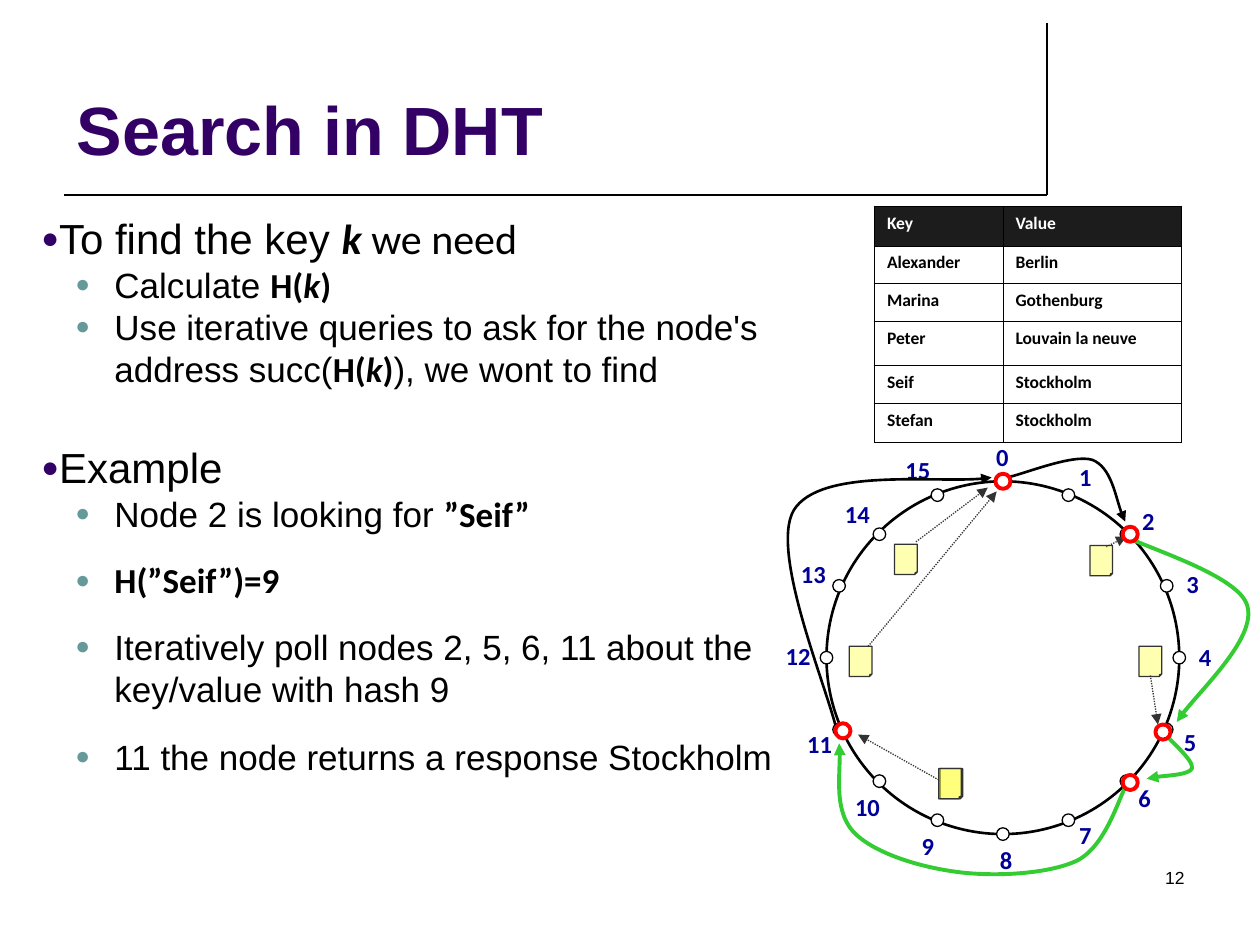
from dataclasses import dataclass

from lxml import etree
from pptx import Presentation, util as u
from pptx.dml.color import RGBColor
from pptx.enum import dml, shapes, text
from pptx.oxml.ns import qn

PX = 9144  # 100 px to the inch
BLACK, WHITE, GRAY, RED = "000000", "FFFFFF", "333333", "FF0000"
PURPLE, TEAL, NAVY, GREEN = "330066", "669999", "000099", "33CC33"
BOLD = dict(font="Calibri", bold=True)
ITAL = dict(BOLD, ital=True)
MID = (796, 522)  # centre of the ring


@dataclass
class Item:
    runs: list
    level: int = 1
    gap: float = 0


@dataclass
class Curve:
    points: list
    color: str = BLACK
    width: float = 1.5


ITEMS = [
    Item([("To find the key ", {}), ("k ", ITAL), ("we need", dict(font="Calibri"))], 0),
    Item([("Calculate ", {}), ("H(", BOLD), ("k", ITAL), (")", BOLD)]),
    Item([("Use iterative queries to ask for the node's address succ(", {}),
          ("H(", BOLD), ("k", ITAL), (")", BOLD), ("), we wont to find", {})]),
    Item([("Example", {})], 0, 30),
    Item([("Node 2 is looking for ", {}), ("”Seif”", BOLD)]),
    Item([("H(”Seif”)=9", BOLD)], gap=14),
    Item([("Iteratively poll nodes 2, 5, 6, 11 about the key/value with hash 9", {})], gap=14),
    Item([("11 the node returns a response Stockholm", {})], gap=15),
]
ROWS = [("Key", "Value"), ("Alexander", "Berlin"), ("Marina", "Gothenburg"),
        ("Peter", "Louvain la neuve"), ("Seif", "Stockholm"), ("Stefan", "Stockholm")]
COLS, HIGHS = (102, 142), (31, 30, 30, 35, 30, 31)

# Top left corners of the labels 0 to 15
LABELS = [(772, 351), (838, 367), (888, 402), (923, 452), (933, 510), (921, 577),
          (885, 622), (838, 651), (775, 671), (713, 660), (665, 629), (627, 579),
          (610, 509), (622, 444), (657, 396), (705, 361)]
# Offsets of the nodes in one quarter of the ring
STEPS = [(0, 140), (52, 129), (98, 98), (130, 57), (140, 0)]
PEERS = [(796, 382), (897, 424), (923, 581), (897, 621), (669, 580)]
NOTES = [(904, 513), (674, 513), (710, 432), (746, 610), (865, 433), (745, 610)]
LINKS = [(727, 430, 784, 387), (689, 513, 791, 390), (878, 434, 894, 426),
         (913, 536, 919, 575), (745, 619, 681, 583)]
CURVES = [
    Curve([(665, 584), (660, 554), (610, 439), (630, 405), (651, 371), (754, 385), (787, 379)]),
    Curve([(799, 379), (811, 377), (851, 360), (867, 365), (882, 371), (887, 403), (893, 414)]),
    Curve([(894, 426), (910, 435), (984, 457), (990, 481), (997, 506), (946, 554), (934, 573)],
          GREEN, 2.25),
    Curve([(925, 583), (929, 588), (948, 604), (946, 610), (943, 615), (917, 616), (910, 618)],
          GREEN, 2.25),
    Curve([(894, 623), (888, 633), (878, 671), (855, 683), (832, 694), (788, 696), (759, 692),
           (729, 688), (693, 677), (677, 660), (662, 643), (668, 605), (666, 590)], GREEN, 2.25),
]


def box(*vals: int) -> list:
    return [u.Emu(v * PX) for v in vals]


def tint(fmt, color: str) -> None:
    """Give a fill, or the fill of a line, one solid colour."""
    fmt.solid()
    fmt.fore_color.rgb = RGBColor.from_string(color)


def node(parent, tag: str, **attrs):
    return etree.SubElement(parent, qn("a:" + tag), attrs)


def put(par, words: str, size: float = 14, font: str = "Arial", color: str = BLACK,
        bold: bool = False, ital: bool = False, align=text.PP_ALIGN.LEFT) -> None:
    par.alignment = align
    run = par.add_run()
    run.text = words
    run.font.size, run.font.name = u.Pt(size), font
    run.font.bold, run.font.italic = bold, ital
    run.font.color.rgb = RGBColor.from_string(color)


def stroke(shape, color: str, width: float, head: bool = False, dots: bool = False) -> None:
    tint(shape.line.fill, color)
    shape.line.width = u.Pt(width)
    if dots:
        shape.line.dash_style = dml.MSO_LINE.ROUND_DOT
    if head:
        node(shape.element.spPr.find(qn("a:ln")), "tailEnd", type="triangle")


def line(slide, ends: tuple, color: str, width: float, **look) -> None:
    link = slide.shapes.add_connector(shapes.MSO_CONNECTOR.STRAIGHT, *box(*ends))
    stroke(link, color, width, **look)
    node(link.element.spPr, "effectLst")


def oval(slide, mid: tuple, size: tuple, color: str, width: float, fill: str = "") -> None:
    x, y = (m - s // 2 for m, s in zip(mid, size))
    disc = slide.shapes.add_shape(shapes.MSO_SHAPE.OVAL, *box(x, y, *size))
    disc.shadow.inherit = False
    stroke(disc, color, width)
    if fill:
        tint(disc.fill, fill)
    else:
        disc.fill.background()


def note(slide, x: int, y: int) -> None:
    page = slide.shapes.add_shape(shapes.MSO_SHAPE.FOLDED_CORNER, *box(x, y, 18, 24))
    page.shadow.inherit = False
    node(page.element.spPr.find(".//" + qn("a:avLst")), "gd", name="adj", fmla="val 10800")
    tint(page.fill, "FFFF00")
    node(page.element.spPr.find(".//" + qn("a:srgbClr")), "alpha", val="30000")
    stroke(page, GRAY, 0.75)


def bend(slide, curve: Curve) -> None:
    """Draw a Bezier curve: a start, then three points to each segment."""
    first, *rest = curve.points
    pen = slide.shapes.build_freeform(*first, scale=PX)
    pen.add_line_segments(rest, close=False)
    arc = pen.convert_to_shape()
    arc.shadow.inherit = False
    arc.fill.background()
    stroke(arc, curve.color, curve.width, head=True)
    route = arc.element.find(".//" + qn("a:path"))
    legs = route.findall(qn("a:lnTo"))
    for trio in zip(*[iter(legs)] * 3):
        cubic = node(route, "cubicBezTo")
        for leg in trio:
            cubic.append(leg[0])
            route.remove(leg)


def frame(slide, area: tuple, inset: bool = True):
    """Add a wrapping text box and return its text frame."""
    body = slide.shapes.add_textbox(*box(*area)).text_frame
    body.word_wrap = True
    if not inset:
        body.margin_left = body.margin_right = body.margin_top = body.margin_bottom = 0
        body.vertical_anchor = text.MSO_ANCHOR.MIDDLE
    return body


def bullets(slide) -> None:
    body = frame(slide, (23, 164, 658, 586))
    for i, item in enumerate(ITEMS):
        par = body.add_paragraph() if i else body.paragraphs[0]
        left, hang, color, size = [(0, 0, PURPLE, 24), (58, -31, TEAL, 20)][item.level]
        props = par._p.get_or_add_pPr()
        props.set("marL", str(left * PX))
        props.set("indent", str(hang * PX))
        node(node(props, "buClr"), "srgbClr", val=color)
        node(props, "buSzPct", val="70000")
        node(props, "buFont", typeface="Arial")
        node(props, "buChar", char="●")
        par.space_before = u.Pt(item.gap)
        for words, look in item.runs:
            put(par, words, size=size, **look)


def grid(slide) -> None:
    area = box(694, 164, sum(COLS), sum(HIGHS))
    table = slide.shapes.add_table(len(ROWS), len(COLS), *area).table
    for col, wide in zip(table.columns, COLS):
        col.width = u.Emu(wide * PX)
    for r, (row, high) in enumerate(zip(ROWS, HIGHS)):
        table.rows[r].height = u.Emu(high * PX)
        for c, words in enumerate(row):
            cell = table.cell(r, c)
            outer = dict(L=c == 0, R=c == 1, T=r == 0, B=r == len(ROWS) - 1)
            for side, edge in outer.items():
                rule = node(cell._tc.get_or_add_tcPr(), "ln" + side,
                            w=str(u.Pt(0.5 if edge else 0.23)))
                node(node(rule, "solidFill"), "srgbClr", val=BLACK)
            if r:
                cell.fill.background()
            else:
                tint(cell.fill, "1C1C1C")
            par = cell.text_frame.paragraphs[0]
            par.line_spacing = 0.98
            put(par, words, size=10, color=BLACK if r else WHITE, **BOLD)


def ring(slide) -> None:
    oval(slide, MID, (280, 280), BLACK, 1.5)
    spots = {(MID[0] + h * x, MID[1] + v * y) for x, y in STEPS for h in (-1, 1) for v in (-1, 1)}
    for spot in sorted(spots):
        oval(slide, spot, (10, 10), BLACK, 0.75, WHITE)
    for i, (x, y) in enumerate(LABELS):
        par = frame(slide, (x, y, 47, 23), inset=False).paragraphs[0]
        put(par, str(i), color=NAVY, align=text.PP_ALIGN.CENTER, **BOLD)
    for ends in LINKS:
        line(slide, ends, GRAY, 0.75, head=True, dots=True)
    for curve in CURVES:
        bend(slide, curve)
    for spot in PEERS:
        oval(slide, spot, (12, 12), RED, 2.25, WHITE)
    for x, y in NOTES:
        note(slide, x, y)


def main() -> None:
    deck = Presentation()
    deck.slide_width, deck.slide_height = box(1000, 750)
    slide = deck.slides.add_slide(deck.slide_layouts[5])
    line(slide, (831, 18, 831, 155), BLACK, 1)
    line(slide, (51, 155, 831, 155), BLACK, 1)
    title = slide.shapes.title
    title.left, title.top, title.width, title.height = box(51, 13, 780, 126)
    title.text_frame.vertical_anchor = text.MSO_ANCHOR.BOTTOM
    title.text_frame.auto_size = text.MSO_AUTO_SIZE.NONE
    put(title.text_frame.paragraphs[0], "Search in DHT", size=39, color=PURPLE, bold=True)
    put(frame(slide, (717, 683, 233, 50)).paragraphs[0], "12", size=10,
        align=text.PP_ALIGN.RIGHT)
    bullets(slide)
    ring(slide)
    grid(slide)
    deck.save("out.pptx")


if __name__ == "__main__":
    main()
